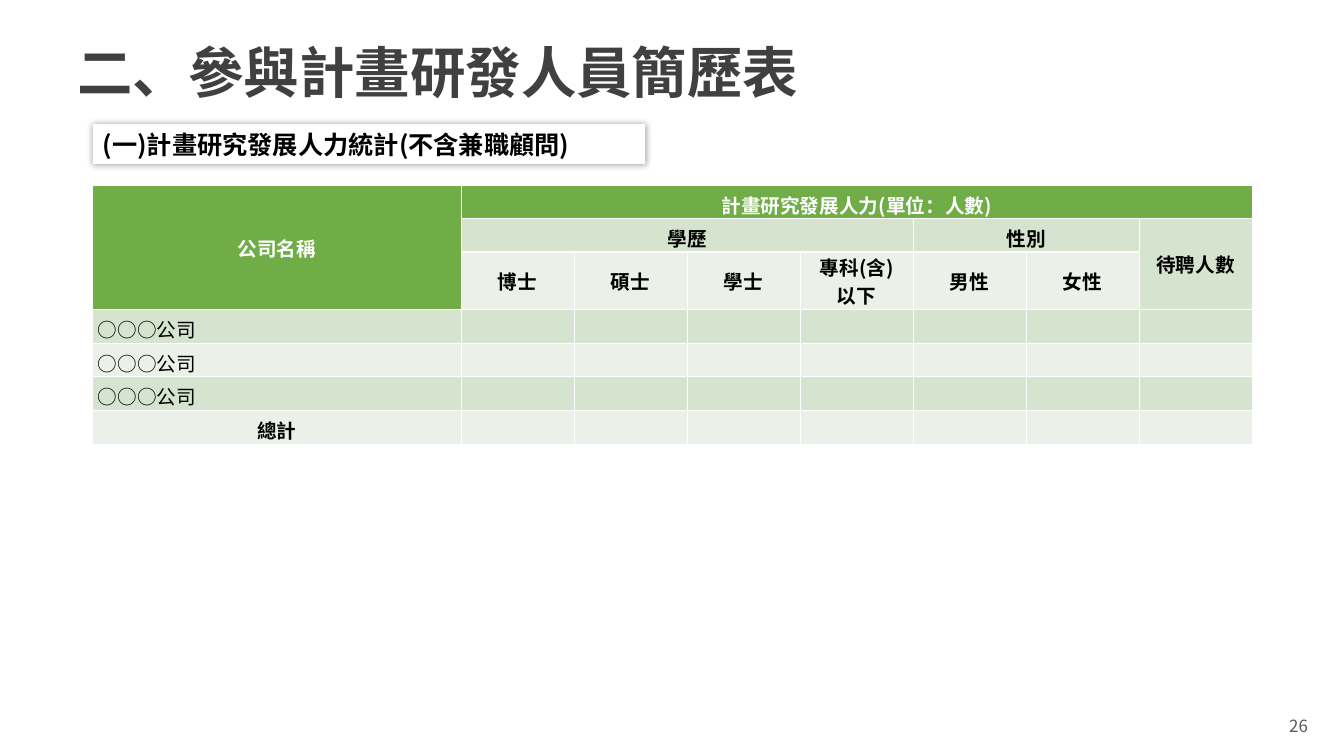
from dataclasses import dataclass

from lxml.etree import SubElement
from pptx import Presentation
from pptx.dml.color import RGBColor
from pptx.enum.shapes import MSO_SHAPE
from pptx.enum.text import MSO_ANCHOR, PP_ALIGN
from pptx.oxml.ns import qn
from pptx.util import Inches, Pt


@dataclass(frozen=True)
class Theme:
    """Colours, type sizes and font of the slide."""
    font: str = "Noto Sans CJK SC"
    title: str = "404040"
    number: str = "595959"
    text: str = "000000"
    white: str = "FFFFFF"
    header: str = "70AD47"
    band_dark: str = "D5E3CF"
    band_light: str = "EBF1E9"
    title_size: float = 39.6
    subtitle_size: int = 18
    table_size: int = 14
    number_size: int = 12


THEME = Theme()
HEADINGS = [
    (0, 0, 2, 0, "公司名稱"),
    (0, 1, 0, 7, "計畫研究發展人力(單位：人數)"),
    (1, 1, 1, 4, "學歷"),
    (1, 5, 1, 6, "性別"),
    (1, 7, 2, 7, "待聘人數"),
]
CATEGORIES = ["博士", "碩士", "學士", "專科(含)\n以下", "男性", "女性"]
COMPANIES = ["○○○公司"] * 3
ROW_HEIGHTS = [0.33, 0.33, 0.57] + [0.335] * 4
COLUMN_WIDTHS = [3.65] + [1.12] * 7


def write(frame, text, size, color, bold=False, align=PP_ALIGN.LEFT):
    """Fill a text frame with styled paragraphs, one for each line."""
    frame.text = text
    frame.word_wrap = True
    frame.vertical_anchor = MSO_ANCHOR.MIDDLE
    for paragraph in frame.paragraphs:
        paragraph.alignment = align
        font = paragraph.font
        font.size, font.bold, font.name = Pt(size), bold, THEME.font
        font.color.rgb = RGBColor.from_string(color)
        properties = paragraph._p.get_or_add_pPr().find(qn("a:defRPr"))
        SubElement(properties, qn("a:ea"), typeface=THEME.font)


def add_title(slide, left, top, width, height):
    """Add the slide title."""
    frame = slide.shapes.add_textbox(left, top, width, height).text_frame
    write(frame, "二、參與計畫研發人員簡歷表", THEME.title_size, THEME.title, True)
    frame.paragraphs[0].line_spacing = 0.9


def add_subtitle(slide, left, top, width, height):
    """Add the white section label with its soft shadow."""
    label = slide.shapes.add_shape(MSO_SHAPE.RECTANGLE, left, top, width, height)
    label.fill.solid()
    label.fill.fore_color.rgb = RGBColor.from_string(THEME.white)
    label.line.fill.background()
    label.shadow.inherit = False
    effects = label._element.spPr.find(qn("a:effectLst"))
    shadow = SubElement(effects, qn("a:outerShdw"), blurRad=str(Pt(5)), dist="0", dir="0")
    color = SubElement(shadow, qn("a:srgbClr"), val=THEME.text)
    SubElement(color, qn("a:alpha"), val="40000")
    write(label.text_frame, "(一)計畫研究發展人力統計(不含兼職顧問)",
          THEME.subtitle_size, THEME.text, True)


def add_borders(cell):
    """Draw white borders around a cell, before its fill in the XML."""
    properties = cell._tc.get_or_add_tcPr()
    for index, side in enumerate(("lnL", "lnR", "lnT", "lnB")):
        border = SubElement(properties, qn(f"a:{side}"), w=str(Pt(1)))
        fill = SubElement(border, qn("a:solidFill"))
        SubElement(fill, qn("a:srgbClr"), val=THEME.white)
        properties.insert(index, border)


def style_cell(cell, row, column):
    """Set the borders, fill and margins of one table cell."""
    add_borders(cell)
    band = THEME.band_dark if row % 2 else THEME.band_light
    is_header = row == 0 or (column == 0 and row < 3)
    cell.fill.solid()
    cell.fill.fore_color.rgb = RGBColor.from_string(THEME.header if is_header else band)
    cell.margin_left = cell.margin_right = Inches(0.05)
    cell.margin_top = cell.margin_bottom = 0
    cell.vertical_anchor = MSO_ANCHOR.MIDDLE


def write_cell(cell, text, color=THEME.text, bold=True, align=PP_ALIGN.CENTER):
    """Write centred table text, or the given variation."""
    write(cell.text_frame, text, THEME.table_size, color, bold, align)
    cell.vertical_anchor = MSO_ANCHOR.MIDDLE


def add_staff_table(slide, left, top, width, height):
    """Add the table of research staff by company."""
    table = slide.shapes.add_table(
        len(ROW_HEIGHTS), len(COLUMN_WIDTHS), left, top, width, height).table
    for row, size in zip(table.rows, ROW_HEIGHTS):
        row.height = int(height * size / sum(ROW_HEIGHTS))
    for column, size in zip(table.columns, COLUMN_WIDTHS):
        column.width = int(width * size / sum(COLUMN_WIDTHS))
    for row in range(len(ROW_HEIGHTS)):
        for column in range(len(COLUMN_WIDTHS)):
            cell = table.cell(row, column)
            style_cell(cell, row, column)
            write_cell(cell, "")
    for first_row, first_column, last_row, last_column, text in HEADINGS:
        cell = table.cell(first_row, first_column)
        cell.merge(table.cell(last_row, last_column))
        write_cell(cell, text, THEME.text if first_row else THEME.white)
        if first_row == last_row:
            cell.margin_top = Inches(0.05)
    for column, text in enumerate(CATEGORIES, start=1):
        write_cell(table.cell(2, column), text)
    for row, text in enumerate(COMPANIES, start=3):
        cell = table.cell(row, 0)
        write_cell(cell, text, bold=False, align=PP_ALIGN.JUSTIFY)
        cell.margin_top = Inches(0.05)
    total = table.cell(len(ROW_HEIGHTS) - 1, 0)
    write_cell(total, "總計")
    total.margin_top = Inches(0.05)


def add_page_number(slide, left, top, width, height):
    """Add the page number at the right of its box."""
    frame = slide.shapes.add_textbox(left, top, width, height).text_frame
    write(frame, "26", THEME.number_size, THEME.number, align=PP_ALIGN.RIGHT)


def main():
    """Build and save the presentation."""
    presentation = Presentation()
    presentation.slide_width, presentation.slide_height = Inches(13.33), Inches(7.5)
    slide = presentation.slides.add_slide(presentation.slide_layouts[6])
    add_title(slide, Inches(0.67), Inches(0.38), Inches(12), Inches(0.73))
    add_page_number(slide, Inches(10.07), Inches(7.08), Inches(3), Inches(0.24))
    add_subtitle(slide, Inches(0.92), Inches(1.23), Inches(5.48), Inches(0.4))
    add_staff_table(slide, Inches(0.92), Inches(1.84), Inches(11.5), Inches(2.57))
    presentation.save("out.pptx")


if __name__ == "__main__":
    main()
